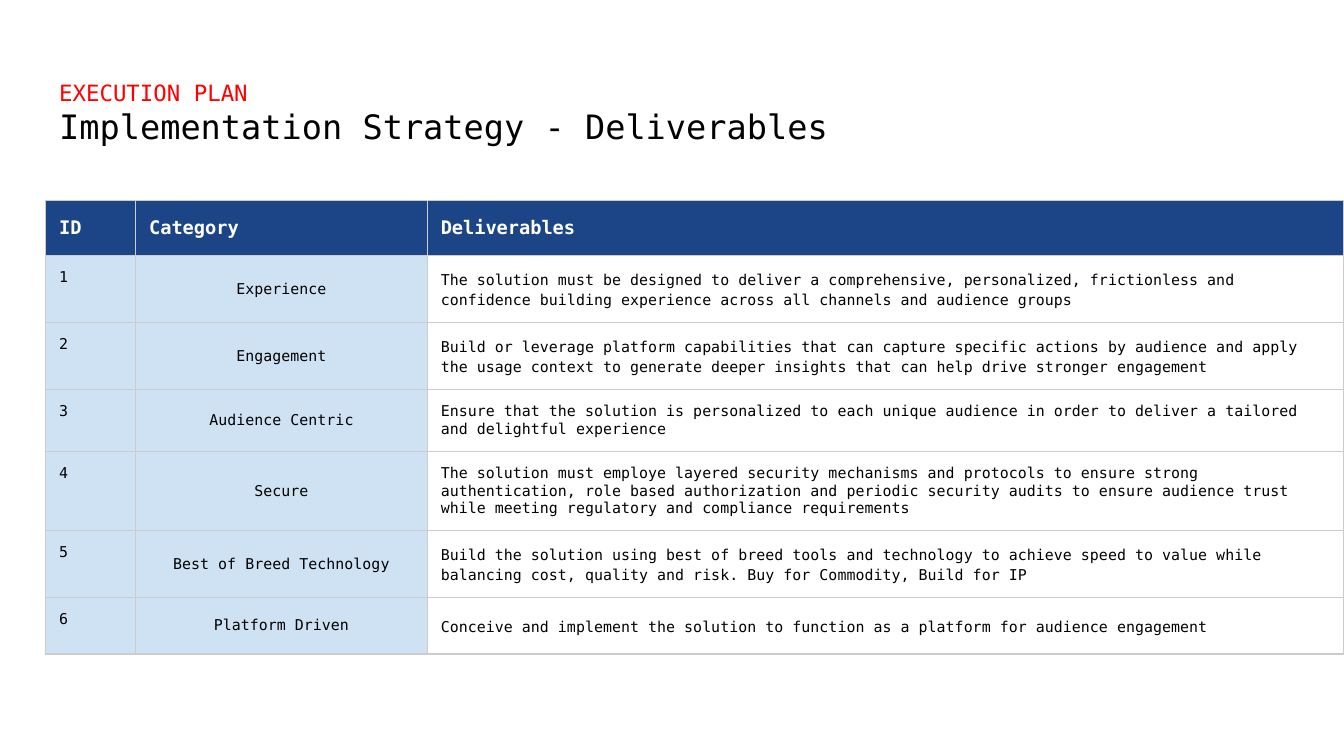
from lxml.etree import SubElement
from pptx import Presentation
from pptx.dml.color import RGBColor
from pptx.enum.text import MSO_ANCHOR, MSO_AUTO_SIZE, PP_ALIGN
from pptx.oxml.ns import qn
from pptx.util import Inches, Pt

FONT = "DejaVu Sans Mono"
COLORS = {
    "background": "FFFFFF",
    "kicker": "FF0000",
    "text": "000000",
    "header": "1C4587",
    "header_text": "FFFFFF",
    "label": "CFE2F3",
    "border": "CCCCCC",
}
TITLE_LINES = [
    ("EXECUTION PLAN", 12, "kicker"),
    ("Implementation Strategy - Deliverables", 18, "text"),
]
HEADERS = ("ID", "Category", "Deliverables")
DELIVERABLES = [
    ("Experience", 1.15,
     "The solution must be designed to deliver a comprehensive, personalized, frictionless and "
     "confidence building experience across all channels and audience groups"),
    ("Engagement", 1.15,
     "Build or leverage platform capabilities that can capture specific actions by audience and apply "
     "the usage context to generate deeper insights that can help drive stronger engagement"),
    ("Audience Centric", 1.0,
     "Ensure that the solution is personalized to each unique audience in order to deliver a tailored "
     "and delightful experience"),
    ("Secure", 1.0,
     "The solution must employe layered security mechanisms and protocols to ensure strong "
     "authentication, role based authorization and periodic security audits to ensure audience trust "
     "while meeting regulatory and compliance requirements"),
    ("Best of Breed Technology", 1.15,
     "Build the solution using best of breed tools and technology to achieve speed to value while "
     "balancing cost, quality and risk. Buy for Commodity, Build for IP"),
    ("Platform Driven", 1.15,
     "Conceive and implement the solution to function as a platform for audience engagement"),
]
COLUMN_WIDTHS = (0.67, 2.17, 6.82)
ROW_HEIGHTS = (0.41, 0.49, 0.41, 0.42, 0.42, 0.42, 0.42)
LEFT = 0.34
MARGIN = Inches(0.1)


def color(name):
    return RGBColor.from_string(COLORS[name])


def set_margins(target):
    target.margin_left = target.margin_right = MARGIN
    target.margin_top = target.margin_bottom = MARGIN


def format_runs(paragraph, size, color_name, bold=False):
    for run in paragraph.runs:
        run.font.name = FONT
        run.font.size = Pt(size)
        run.font.bold = bold
        run.font.color.rgb = color(color_name)


def add_borders(cell):
    properties = cell._tc.get_or_add_tcPr()
    for side in ("lnL", "lnR", "lnT", "lnB"):
        line = SubElement(properties, qn(f"a:{side}"), w=str(Pt(0.75)))
        fill = SubElement(line, qn("a:solidFill"))
        SubElement(fill, qn("a:srgbClr"), val=COLORS["border"])


def fill_cell(cell, text, fill=None, size=8, text_color="text", bold=False,
              align=PP_ALIGN.LEFT, anchor=MSO_ANCHOR.MIDDLE, spacing=1.0):
    set_margins(cell)
    cell.vertical_anchor = anchor
    add_borders(cell)
    if fill:
        cell.fill.solid()
        cell.fill.fore_color.rgb = color(fill)
    else:
        cell.fill.background()
    cell.text_frame.text = text
    paragraph = cell.text_frame.paragraphs[0]
    paragraph.alignment = align
    paragraph.line_spacing = spacing
    format_runs(paragraph, size, text_color, bold)


def add_title(slide):
    title = slide.shapes.title
    title.left, title.top = Inches(LEFT), Inches(0.49)
    title.width, title.height = Inches(9.32), Inches(0.63)
    frame = title.text_frame
    set_margins(frame)
    frame.word_wrap = True
    frame.auto_size = MSO_AUTO_SIZE.NONE
    frame.vertical_anchor = MSO_ANCHOR.TOP
    frame.text = "\n".join(text for text, _, _ in TITLE_LINES)
    for paragraph, (_, size, color_name) in zip(frame.paragraphs, TITLE_LINES):
        paragraph.alignment = PP_ALIGN.LEFT
        format_runs(paragraph, size, color_name)


def add_deliverables_table(slide):
    table = slide.shapes.add_table(
        len(ROW_HEIGHTS), len(COLUMN_WIDTHS), Inches(LEFT), Inches(1.49),
        Inches(sum(COLUMN_WIDTHS)), Inches(sum(ROW_HEIGHTS))).table
    for column, width in zip(table.columns, COLUMN_WIDTHS):
        column.width = Inches(width)
    for row, height in zip(table.rows, ROW_HEIGHTS):
        row.height = Inches(height)
    for index, header in enumerate(HEADERS):
        fill_cell(table.cell(0, index), header, "header", 10, "header_text", True)
    for number, (category, spacing, deliverable) in enumerate(DELIVERABLES, 1):
        fill_cell(table.cell(number, 0), str(number), "label", anchor=MSO_ANCHOR.TOP)
        fill_cell(table.cell(number, 1), category, "label", align=PP_ALIGN.CENTER)
        fill_cell(table.cell(number, 2), deliverable, spacing=spacing)


def main():
    """Build the implementation strategy slide with its deliverables table."""
    presentation = Presentation()
    presentation.slide_width = Inches(10)
    presentation.slide_height = presentation.slide_width * 9 // 16
    slide = presentation.slides.add_slide(presentation.slide_layouts[5])
    slide.background.fill.solid()
    slide.background.fill.fore_color.rgb = color("background")
    add_title(slide)
    add_deliverables_table(slide)
    presentation.save("out.pptx")


if __name__ == "__main__":
    main()
